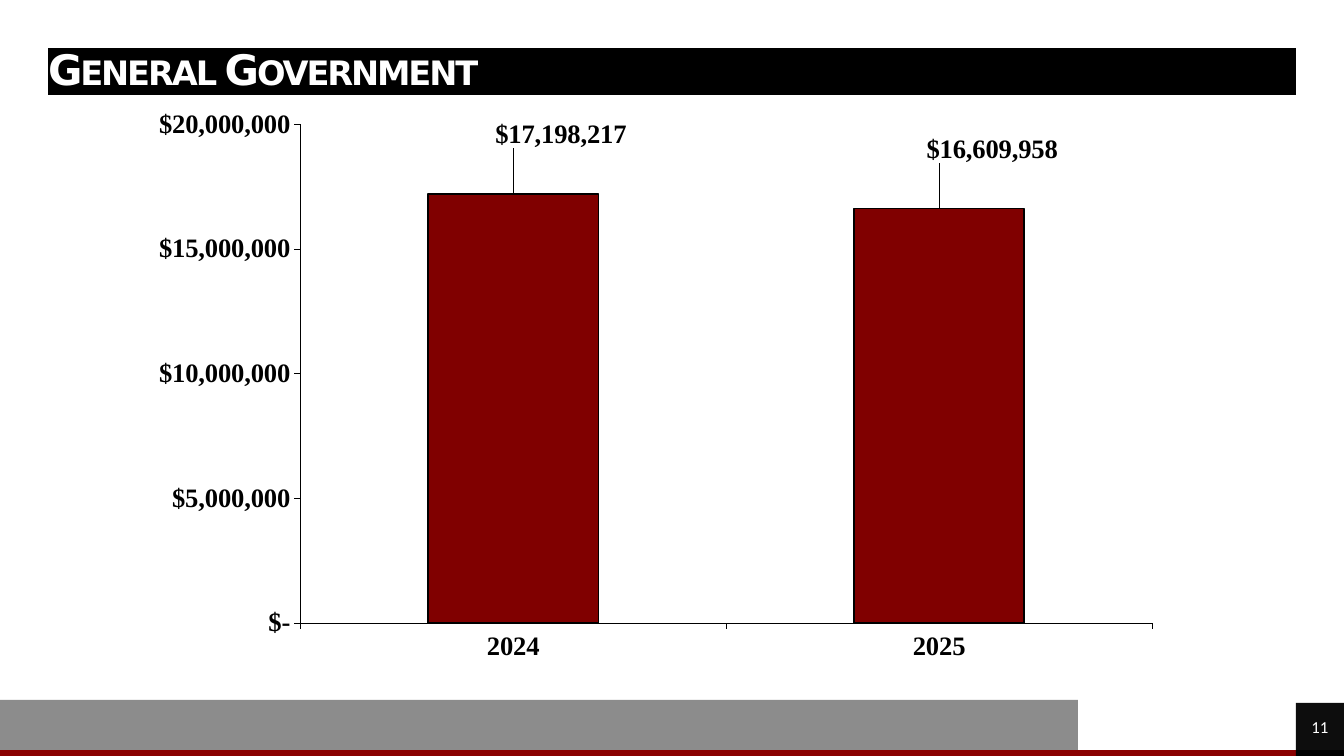
"""Build the General Government slide with its two-year column chart."""
from lxml import etree
from pptx import Presentation
from pptx.chart.data import CategoryChartData
from pptx.dml.color import RGBColor
from pptx.enum.chart import XL_CHART_TYPE, XL_LABEL_POSITION, XL_TICK_LABEL_POSITION, XL_TICK_MARK
from pptx.enum.shapes import MSO_SHAPE
from pptx.enum.text import MSO_ANCHOR, MSO_AUTO_SIZE, PP_ALIGN
from pptx.oxml.ns import qn
from pptx.util import Pt

PX = 9144000 / 1008
RECTANGLE = MSO_SHAPE.RECTANGLE
COLUMNS = XL_CHART_TYPE.COLUMN_CLUSTERED
OUTSIDE_END = XL_LABEL_POSITION.OUTSIDE_END
LABELS_LOW = XL_TICK_LABEL_POSITION.LOW
TICK_OUTSIDE = XL_TICK_MARK.OUTSIDE
MIDDLE = MSO_ANCHOR.MIDDLE
NO_AUTOFIT = MSO_AUTO_SIZE.NONE
LEFT = PP_ALIGN.LEFT
CENTER = PP_ALIGN.CENTER

COLORS = {
    "black": "000000",
    "tile": "0D0D0D",
    "white": "FFFFFF",
    "gray": "8C8C8C",
    "red": "8A0000",
    "maroon": "800000",
}
CURRENCY = '"$"#,##0;("$"#,##0);"$-"'


def write_text(shape, text, font="Calibri", size=12, bold=False, align=LEFT, line_spacing=1.0):
    frame = shape.text_frame
    frame.word_wrap = True
    frame.auto_size = NO_AUTOFIT
    frame.vertical_anchor = MIDDLE
    frame.margin_left = frame.margin_top = frame.margin_right = frame.margin_bottom = 0
    paragraph = frame.paragraphs[0]
    paragraph.alignment = align
    paragraph.line_spacing = line_spacing
    run = paragraph.add_run()
    run.text = text
    run.font.name = font
    run.font.size = Pt(size)
    run.font.bold = bold
    run.font.color.rgb = RGBColor.from_string(COLORS["white"])
    return run


def add_manual_layout(parent, index, **settings):
    layout = etree.Element(qn("c:layout"))
    manual = etree.SubElement(layout, qn("c:manualLayout"))
    for name, value in settings.items():
        etree.SubElement(manual, qn(f"c:{name}")).set("val", str(value))
    parent.insert(index, layout)


presentation = Presentation()
presentation.slide_width = round(1344 * PX)
presentation.slide_height = round(756 * PX)
slide = presentation.slides.add_slide(presentation.slide_layouts[5])

bars = [
    (1078, 750, 218, 6, "red"),
    (0, 700, 1078, 50, "gray"),
    (0, 750, 1078, 6, "red"),
    (1296, 750, 48, 6, "black"),
    (1296, 703, 48, 47, "tile"),
]
for left, top, width, height, color in bars:
    bar = slide.shapes.add_shape(RECTANGLE, *(round(n * PX) for n in (left, top, width, height)))
    bar.shadow.inherit = False
    bar.fill.solid()
    bar.fill.fore_color.rgb = RGBColor.from_string(COLORS[color])
    bar.line.fill.background()
    if color == "tile":
        write_text(bar, "11", align=CENTER)

title = slide.shapes.title
title.left, title.top, title.width, title.height = (round(n * PX) for n in (48, 48, 1248, 47))
title.fill.solid()
title.fill.fore_color.rgb = RGBColor.from_string(COLORS["black"])
title_run = write_text(title, "General Government", font="DejaVu Sans", size=30, bold=True, line_spacing=0.9)
title_properties = title_run.font._element
title_properties.set("cap", "small")
title_properties.set("spc", "-150")

chart_data = CategoryChartData(number_format=CURRENCY)
chart_data.categories = ["2024", "2025"]
chart_data.add_series("Series 1", [17198217, 16609958])
chart_box = (round(n * PX) for n in (105, 110, 1061, 590))
chart = slide.shapes.add_chart(COLUMNS, *chart_box, chart_data).chart
chart.has_legend = False
chart.has_title = False

value_axis = chart.value_axis
value_axis.minimum_scale = 0
value_axis.maximum_scale = 20000000
value_axis.major_unit = 5000000
value_axis.has_major_gridlines = False
value_axis.tick_labels.number_format = CURRENCY
value_axis.tick_labels.number_format_is_linked = False
chart.category_axis.tick_label_position = LABELS_LOW
for axis in (chart.category_axis, value_axis):
    axis.major_tick_mark = TICK_OUTSIDE
    axis.format.line.width = Pt(0.29)
    axis.format.line.color.rgb = RGBColor.from_string(COLORS["black"])

plot = chart.plots[0]
plot.gap_width = 150
plot.vary_by_categories = False
series = plot.series[0]
series.format.fill.solid()
series.format.fill.fore_color.rgb = RGBColor.from_string(COLORS["maroon"])
series.format.line.width = Pt(1.18)
series.format.line.color.rgb = RGBColor.from_string(COLORS["black"])

labels = [series.points[index].data_label for index in range(2)]
for font in [chart.font, chart.category_axis.tick_labels.font, value_axis.tick_labels.font] + [
    label.font for label in labels
]:
    font.name = "Times New Roman"
    font.size = Pt(19)
    font.bold = True
    font.color.rgb = RGBColor.from_string(COLORS["black"])

label_elements = series._element.findall(f".//{qn('c:dLbl')}")
for label, element, shift in zip(labels, label_elements, (0.045, 0.05)):
    label.position = OUTSIDE_END
    add_manual_layout(element, 1, x=shift, y=-0.07)

plot_area = chart._chartSpace.find(f".//{qn('c:plotArea')}")
for old_layout in plot_area.findall(qn("c:layout")):
    plot_area.remove(old_layout)
add_manual_layout(
    plot_area, 0, layoutTarget="inner", xMode="edge", yMode="edge", x=0.184, y=0.022, w=0.803, h=0.847
)

presentation.save("out.pptx")
